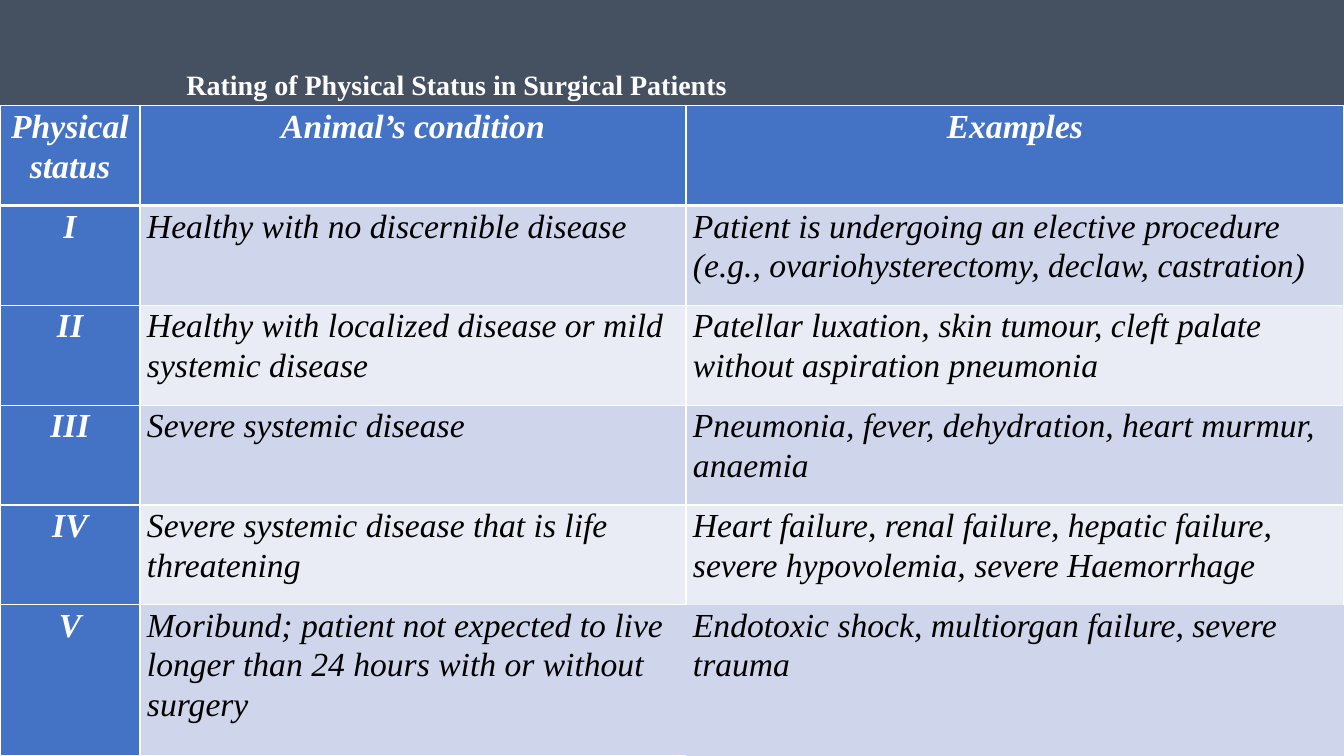
from lxml.etree import SubElement
from pptx import Presentation
from pptx.dml.color import RGBColor
from pptx.enum.text import MSO_AUTO_SIZE, PP_ALIGN
from pptx.oxml.ns import qn
from pptx.util import Inches, Pt

SLATE = RGBColor(0x45, 0x50, 0x60)
WHITE = RGBColor(0xFF, 0xFF, 0xFF)
BLACK = RGBColor(0x00, 0x00, 0x00)
BLUE = RGBColor(0x44, 0x72, 0xC4)
BANDS = (RGBColor(0xE9, 0xEB, 0xF5), RGBColor(0xCF, 0xD5, 0xEA))

GRID_COLUMNS = 96
GRID_ROWS = 60
COLUMN_SPANS = (10, 39, 47)
ROW_SPANS = (7.92,) * 5 + (12,)
STATUS_ROWS = (
    ("Physical status", "Animal’s condition", "Examples"),
    ("I", "Healthy with no discernible disease",
     "Patient is undergoing an elective procedure (e.g., ovariohysterectomy, declaw, castration)"),
    ("II", "Healthy with localized disease or mild systemic disease",
     "Patellar luxation, skin tumour, cleft palate without aspiration pneumonia"),
    ("III", "Severe systemic disease",
     "Pneumonia, fever, dehydration, heart murmur, anaemia"),
    ("IV", "Severe systemic disease that is life threatening",
     "Heart failure, renal failure, hepatic failure, severe hypovolemia, severe Haemorrhage"),
    ("V", "Moribund; patient not expected to live longer than 24 hours with or without surgery",
     "Endotoxic shock, multiorgan failure, severe trauma"),
)
OPEN_SIDES = {(4, 2): "B", (5, 1): "R", (5, 2): "LRTB"}


class SlideBuilder:
    font_name = "Times New Roman"

    def __init__(self, presentation):
        self.slide = presentation.slides.add_slide(presentation.slide_layouts[6])
        self.column = presentation.slide_width / GRID_COLUMNS
        self.row = presentation.slide_height / GRID_ROWS

    def across(self, columns):
        return round(columns * self.column)

    def down(self, rows):
        return round(rows * self.row)

    def box(self, left, top, width, height):
        return self.across(left), self.down(top), self.across(width), self.down(height)

    def background(self, color):
        fill = self.slide.background.fill
        fill.solid()
        fill.fore_color.rgb = color

    def set_text(self, paragraph, text, size, color, bold, italic=False):
        paragraph.text = text
        font = paragraph.font
        font.name, font.size = self.font_name, Pt(size)
        font.bold, font.italic = bold, italic
        font.color.rgb = color

    def title(self, text, left, top, width, height):
        frame = self.slide.shapes.add_textbox(*self.box(left, top, width, height)).text_frame
        frame.word_wrap = True
        frame.auto_size = MSO_AUTO_SIZE.SHAPE_TO_FIT_TEXT
        self.set_text(frame.paragraphs[0], text, 20, WHITE, True)

    def table(self, rows, top):
        box = self.box(0, top, sum(COLUMN_SPANS), sum(ROW_SPANS))
        table = self.slide.shapes.add_table(len(rows), len(COLUMN_SPANS), *box).table
        table.first_row = table.horz_banding = False
        for column, span in zip(table.columns, COLUMN_SPANS):
            column.width = self.across(span)
        for row, span in zip(table.rows, ROW_SPANS):
            row.height = self.down(span)
        for row_index, texts in enumerate(rows):
            for column_index, text in enumerate(texts):
                self.cell(table.cell(row_index, column_index), text, row_index, column_index)

    def cell(self, cell, text, row_index, column_index):
        heading = row_index == 0 or column_index == 0
        cell.margin_left = cell.margin_right = Inches(0.07)
        cell.margin_top = cell.margin_bottom = 0
        paragraph = cell.text_frame.paragraphs[0]
        paragraph.alignment = PP_ALIGN.CENTER if heading else PP_ALIGN.LEFT
        paragraph.line_spacing = 1.07
        paragraph.space_after = Pt(8)
        self.set_text(paragraph, text, 24, WHITE if heading else BLACK, heading, True)
        open_sides = OPEN_SIDES.get((row_index, column_index), "")
        for side in "LRTB":
            thick = (row_index, side) in ((0, "B"), (1, "T"))
            self.border(cell, side, 3 if thick else 1, side not in open_sides)
        cell.fill.solid()
        cell.fill.fore_color.rgb = BLUE if heading else BANDS[row_index % 2]

    def border(self, cell, side, points, visible):
        properties = cell._tc.get_or_add_tcPr()
        line = SubElement(properties, qn(f"a:ln{side}"), w=str(Pt(points)))
        if visible:
            fill = SubElement(line, qn("a:solidFill"))
            SubElement(fill, qn("a:srgbClr"), val=str(WHITE))
        else:
            SubElement(line, qn("a:noFill"))


def main():
    presentation = Presentation()
    presentation.slide_width = Inches(13.33)
    presentation.slide_height = Inches(7.5)
    builder = SlideBuilder(presentation)
    builder.background(SLATE)
    builder.title("Rating of Physical Status in Surgical Patients", 12.6, 5, 76, 3.5)
    builder.table(STATUS_ROWS, 8.4)
    presentation.save("out.pptx")


if __name__ == "__main__":
    main()
